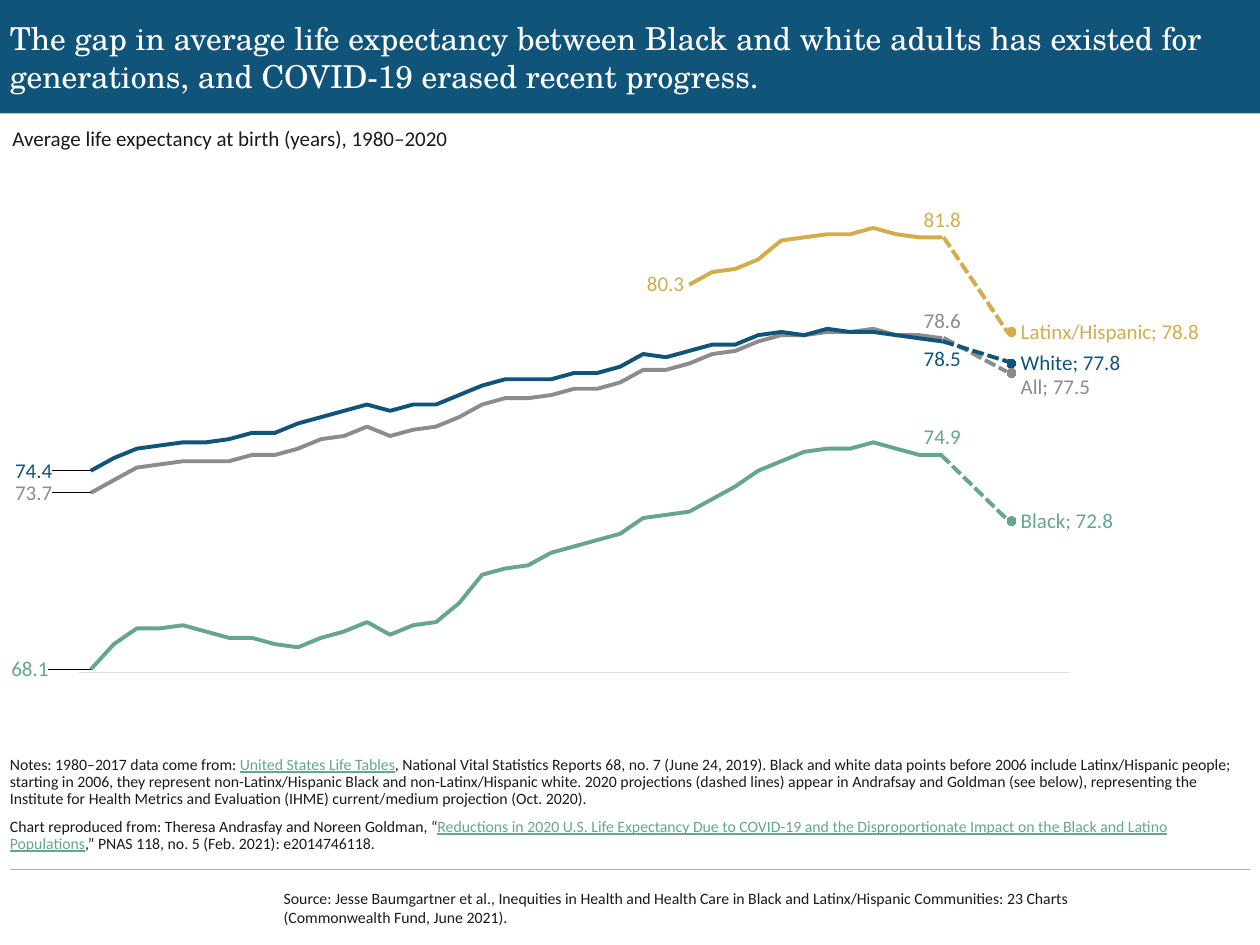
from lxml import etree
from pptx import Presentation
from pptx.chart.data import CategoryChartData
from pptx.dml.color import RGBColor
from pptx.enum.chart import XL_CHART_TYPE as ChartType
from pptx.enum.chart import XL_LABEL_POSITION as LabelPosition
from pptx.enum.chart import XL_MARKER_STYLE as MarkerStyle
from pptx.enum.chart import XL_TICK_LABEL_POSITION as TickLabelPosition
from pptx.enum.chart import XL_TICK_MARK as TickMark
from pptx.enum.dml import MSO_LINE as LineDash
from pptx.enum.shapes import MSO_CONNECTOR as Connector
from pptx.enum.shapes import MSO_SHAPE as ShapeType
from pptx.enum.text import MSO_ANCHOR as Anchor
from pptx.enum.text import MSO_AUTO_SIZE as AutoSize
from pptx.enum.text import PP_ALIGN as Align
from pptx.oxml import parse_xml
from pptx.oxml.ns import nsdecls, qn
from pptx.util import Cm, Pt

COLORS = {
    "banner": "115479", "text": "1A1A1A", "title": "FFFFFF", "rule": "ABABAB",
    "axis": "DDDDDD", "link": "65A591",
    "All": "8C8C8C", "White": "115479", "Black": "65A591", "Latinx/Hispanic": "D3AC4C",
}
BODY_FONT, TITLE_FONT = "Calibri", "TeX Gyre Schola"

# Categories 0-37 are 1980-2017; the 2020 projection stands at 40
LAST_YEAR, PROJECTION = 37, 40
CATEGORIES = [str(year) for year in range(1980, 2018)] + ["", "", "2020", "", ""]
LIFE_EXPECTANCY = {
    "All": [73.7, 74.1, 74.5, 74.6, 74.7, 74.7, 74.7, 74.9, 74.9, 75.1, 75.4, 75.5, 75.8,
            75.5, 75.7, 75.8, 76.1, 76.5, 76.7, 76.7, 76.8, 77, 77, 77.2, 77.6, 77.6,
            77.8, 78.1, 78.2, 78.5, 78.7, 78.7, 78.8, 78.8, 78.9, 78.7, 78.7, 78.6],
    "White": [74.4, 74.8, 75.1, 75.2, 75.3, 75.3, 75.4, 75.6, 75.6, 75.9, 76.1, 76.3, 76.5,
              76.3, 76.5, 76.5, 76.8, 77.1, 77.3, 77.3, 77.3, 77.5, 77.5, 77.7, 78.1, 78,
              78.2, 78.4, 78.4, 78.7, 78.8, 78.7, 78.9, 78.8, 78.8, 78.7, 78.6, 78.5],
    "Black": [68.1, 68.9, 69.4, 69.4, 69.5, 69.3, 69.1, 69.1, 68.9, 68.8, 69.1, 69.3, 69.6,
              69.2, 69.5, 69.6, 70.2, 71.1, 71.3, 71.4, 71.8, 72, 72.2, 72.4, 72.9, 73,
              73.1, 73.5, 73.9, 74.4, 74.7, 75, 75.1, 75.1, 75.3, 75.1, 74.9, 74.9],
    "Latinx/Hispanic": [None] * 26 + [80.3, 80.7, 80.8, 81.1, 81.7, 81.8, 81.9, 81.9, 82.1,
                                      81.9, 81.8, 81.8],
}
PROJECTED = {"All": 77.5, "White": 77.8, "Black": 72.8, "Latinx/Hispanic": 78.8}
# Label shifts as fractions of the chart size
LABEL_SHIFTS = {("All", 0): (-0.027, 0), ("White", 0): (-0.027, 0),
                ("Black", 0): (-0.03, 0), ("All", PROJECTION): (0, 0.025)}
# Dashed projection lines, in centimetres
PROJECTION_LINES = {
    "All": (19.02, 6.81, 20.29, 7.49),
    "Latinx/Hispanic": (19.02, 4.78, 20.32, 6.71),
    "White": (19, 6.88, 20.32, 7.29),
    "Black": (18.97, 9.17, 20.32, 10.49),
}
NOTES = [
    [("Notes: 1980–2017 data come from: ", False),
     ("United States Life Tables", True),
     (", National Vital Statistics Reports 68, no. 7 (June 24, 2019). Black and white data "
      "points before 2006 include Latinx/Hispanic people; starting in 2006, they represent "
      "non-Latinx/Hispanic Black and non-Latinx/Hispanic white. 2020 projections (dashed "
      "lines) appear in Andrafsay and Goldman (see below), representing the Institute for "
      "Health Metrics and Evaluation (IHME) current/medium projection (Oct. 2020).", False)],
    [("Chart reproduced from: Theresa Andrasfay and Noreen Goldman, “", False),
     ("Reductions in 2020 U.S. Life Expectancy Due to COVID-19 and the Disproportionate "
      "Impact on the Black and Latino Populations", True),
     (",” PNAS 118, no. 5 (Feb. 2021): e2014746118.", False)],
]


def rgb(name):
    return RGBColor.from_string(COLORS[name])


def style_font(font, size, color="text", name=BODY_FONT):
    font.size, font.name = Pt(size), name
    font.color.rgb = rgb(color)


def add_run(paragraph, text, size, color="text", name=BODY_FONT):
    run = paragraph.add_run()
    run.text = text
    style_font(run.font, size, color, name)
    return run


def set_frame(shape, anchor, inset=True):
    frame = shape.text_frame
    frame.word_wrap, frame.auto_size = True, AutoSize.NONE
    frame.vertical_anchor = anchor
    if not inset:
        frame.margin_left = frame.margin_right = frame.margin_top = frame.margin_bottom = 0
    return frame


def add_text(slide, box, anchor=Anchor.TOP, inset=True):
    return set_frame(slide.shapes.add_textbox(*map(Cm, box)), anchor, inset)


def add_line(slide, ends, color, width, dash=None):
    line = slide.shapes.add_connector(Connector.STRAIGHT, *map(Cm, ends))
    line.line.color.rgb, line.line.width = rgb(color), Pt(width)
    if dash:
        line.line.dash_style = dash
    etree.SubElement(line._element.spPr, qn("a:effectLst"))


def add_title(slide):
    banner = slide.shapes.add_shape(ShapeType.RECTANGLE, 0, 0, Cm(25.4), Cm(2.29))
    banner.shadow.inherit = False
    banner.fill.solid()
    banner.fill.fore_color.rgb = rgb("banner")
    banner.line.fill.background()
    slide.shapes._spTree.insert(2, banner._element)  # behind the title

    title = slide.shapes.title
    title.left, title.top, title.width, title.height = map(Cm, (0.2, 0, 25, 2.29))
    paragraph = set_frame(title, Anchor.MIDDLE, inset=False).paragraphs[0]
    paragraph.alignment = Align.LEFT
    add_run(paragraph, "The gap in average life expectancy between Black and white adults has "
            "existed for generations, and COVID-19 erased recent progress.",
            18, "title", TITLE_FONT)


def manual_layout(**values):
    parts = "".join(f'<c:{tag} val="{value}"/>' for tag, value in values.items())
    return parse_xml(f'<c:layout {nsdecls("c")}><c:manualLayout>{parts}'
                     "</c:manualLayout></c:layout>")


def label_point(series, index, position):
    label = series.points[index].data_label
    style_font(label.font, 12, series.name)
    label.position = position
    element = series._element.xpath(f"c:dLbls/c:dLbl[c:idx/@val='{index}']")[0]
    if index == PROJECTION:
        element.find(qn("c:showSerName")).set("val", "1")
        separator = parse_xml(f'<c:separator {nsdecls("c")}>; </c:separator>')
        element.find(qn("c:showBubbleSize")).addnext(separator)
    if (series.name, index) in LABEL_SHIFTS:
        x, y = LABEL_SHIFTS[series.name, index]
        element.insert(1, manual_layout(x=x, y=y))


def style_series(series):
    color = rgb(series.name)
    series.smooth = False
    series.format.line.color.rgb, series.format.line.width = color, Pt(2.25)
    series.marker.style = MarkerStyle.NONE
    marker = series.points[PROJECTION].marker
    marker.style, marker.size = MarkerStyle.CIRCLE, 5
    marker.format.fill.solid()
    marker.format.fill.fore_color.rgb = marker.format.line.color.rgb = color

    # Labels on the first, last and projected values, with leader lines
    series.data_labels.show_value = False
    first = next(i for i, value in enumerate(series.values) if value is not None)
    label_point(series, first, LabelPosition.LEFT)
    label_point(series, LAST_YEAR,
                LabelPosition.BELOW if series.name == "White" else LabelPosition.ABOVE)
    label_point(series, PROJECTION, LabelPosition.RIGHT)
    series._element.find(qn("c:dLbls")).append(parse_xml(
        f'<c:extLst {nsdecls("c")}><c:ext uri="{{CE6537A1-D6FC-4f65-9D91-7224C49458BB}}" '
        'xmlns:c15="http://schemas.microsoft.com/office/drawing/2012/chart">'
        '<c15:showLeaderLines val="1"/></c:ext></c:extLst>'))


def add_life_chart(slide):
    data = CategoryChartData(number_format="0.0")
    data.categories = CATEGORIES
    for name, values in LIFE_EXPECTANCY.items():
        data.add_series(name, values + [None, None, PROJECTED[name], None, None])
    chart = slide.shapes.add_chart(ChartType.LINE_MARKERS, *map(Cm, (0.2, 3, 25, 11.43)),
                                   data).chart
    chart.has_legend = chart.has_title = False
    style_font(chart.font, 12)

    years, ages = chart.category_axis, chart.value_axis
    years.major_tick_mark = years.minor_tick_mark = TickMark.NONE
    years.tick_label_position = TickLabelPosition.NONE
    years.format.line.color.rgb, years.format.line.width = rgb("axis"), Pt(0.75)
    ages.minimum_scale, ages.maximum_scale, ages.major_unit = 68, 84, 5
    ages.has_major_gridlines = ages.visible = False

    area = chart._chartSpace.chart.plotArea
    for layout in area.findall(qn("c:layout")):
        area.remove(layout)
    area.insert(0, manual_layout(layoutTarget="inner", xMode="edge", yMode="edge",
                                 x=0.056, y=0.034, w=0.798, h=0.89))
    chart.plots[0].vary_by_categories = False
    for series in chart.plots[0].series:
        style_series(series)


def add_notes(slide):
    frame = add_text(slide, (0.2, 15.82, 25, 1.37), Anchor.BOTTOM, inset=False)
    for number, pieces in enumerate(NOTES):
        paragraph = frame.add_paragraph() if number else frame.paragraphs[0]
        paragraph.line_spacing, paragraph.space_after = 0.9, Pt(6)
        for text, linked in pieces:
            run = add_run(paragraph, text, 9, "link" if linked else "text")
            run.font.underline = linked


def main():
    presentation = Presentation()
    presentation.slide_width, presentation.slide_height = Cm(25.4), Cm(19.05)
    slide = presentation.slides.add_slide(presentation.slide_layouts[5])

    # Heading and chart
    add_title(slide)
    subtitle = add_text(slide, (0, 2.41, 18.47, 0.76))
    add_run(subtitle.paragraphs[0], "Average life expectancy at birth (years), 1980–2020", 12)
    add_life_chart(slide)
    for group, ends in PROJECTION_LINES.items():
        add_line(slide, ends, group, 2.25, LineDash.SQUARE_DOT)

    # Notes and source
    add_notes(slide)
    add_line(slide, (25.2, 17.53, 0.2, 17.53), "rule", 0.75)
    source = add_text(slide, (5.72, 17.91, 17.91, 0.76), Anchor.MIDDLE, inset=False)
    add_run(source.paragraphs[0], "Source: Jesse Baumgartner et al., Inequities in Health and "
            "Health Care in Black and Latinx/Hispanic Communities: 23 Charts "
            "(Commonwealth Fund, June 2021).", 9)
    presentation.save("out.pptx")


if __name__ == "__main__":
    main()
